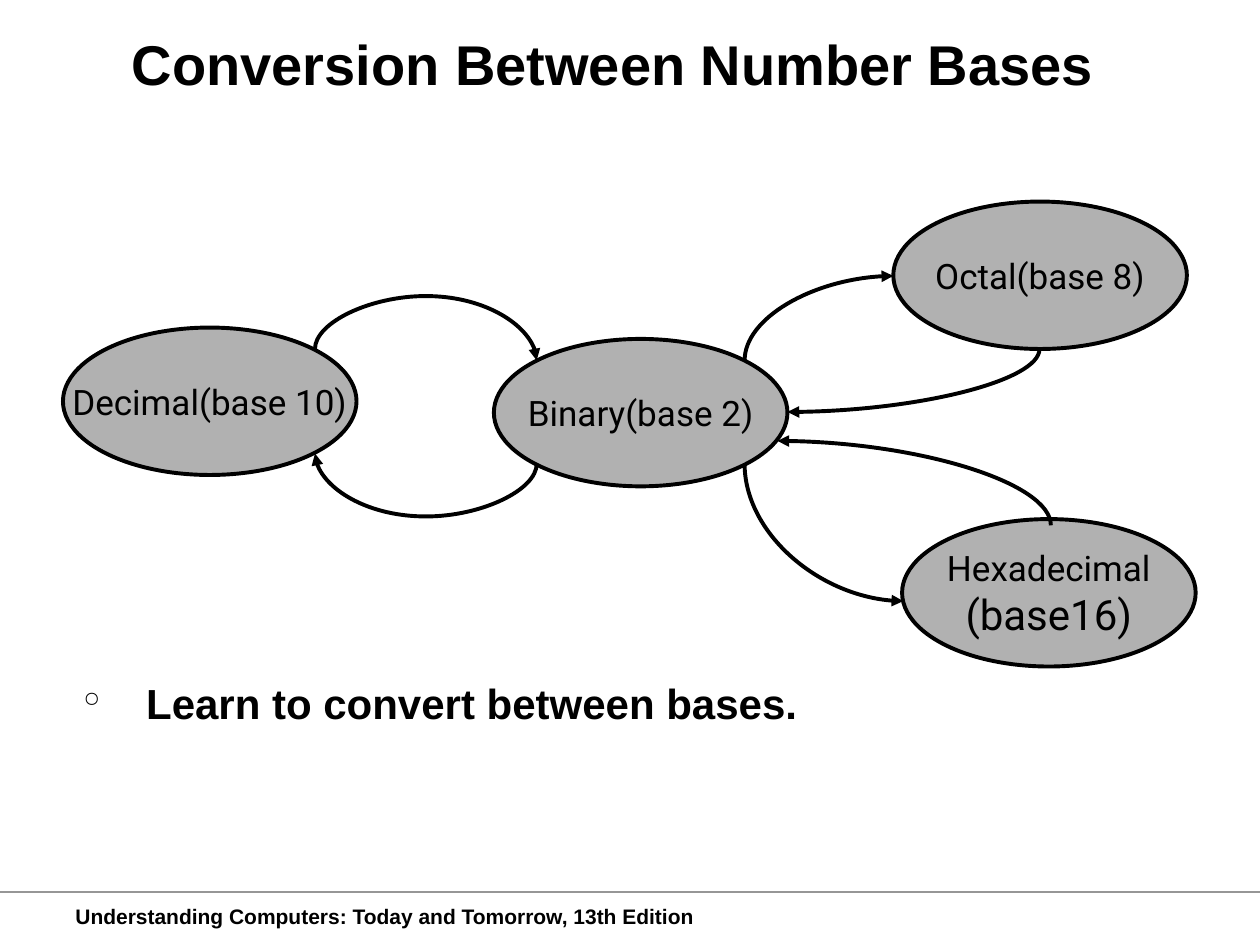
from typing import NamedTuple, Optional

from lxml import etree
from pptx import Presentation
from pptx.dml.color import RGBColor
from pptx.enum import shapes, text
from pptx.oxml.ns import qn
from pptx.util import Inches, Pt

COLORS = {"black": "000000", "fill": "B1B1B1", "rule": "969696"}
NODE_W, NODE_H = 2.33, 1.17
CENTER = text.PP_ALIGN.CENTER


class Line(NamedTuple):
    text: str
    size: float


class Node(NamedTuple):
    x: float
    y: float
    lines: tuple[Line, ...]


class Arc(NamedTuple):
    start: tuple[float, float]
    end: tuple[float, float]
    peak: Optional[float] = None  # height of the bulge of a two-bend arc


NODES = [
    Node(7.16, 4.12, (Line("Hexadecimal", 20), Line("(base16)", 24))),
    Node(0.5, 2.6, (Line("Decimal(base 10)", 20),)),
    Node(7.09, 1.6, (Line("Octal(base 8)", 20),)),
    Node(3.92, 2.69, (Line("Binary(base 2)", 20),)),
]
ARCS = [
    Arc((2.5, 2.77), (4.26, 2.86), 2.35),  # decimal to binary
    Arc((4.26, 3.68), (2.5, 3.6), 4.1),    # binary to decimal
    Arc((5.91, 2.86), (7.09, 2.19)),       # binary to octal
    Arc((8.25, 2.77), (6.25, 3.27)),       # octal to binary
    Arc((8.34, 4.17), (6.17, 3.5)),        # hexadecimal to binary
    Arc((5.91, 3.68), (7.17, 4.77)),       # binary to hexadecimal
]


def rgb(name: str) -> RGBColor:
    return RGBColor.from_string(COLORS[name])


def set_attrs(obj, values: dict) -> None:
    for name, value in values.items():
        setattr(obj, name, value)


def write(p, line: Line, font: str, bold: bool) -> None:
    r = p.add_run()
    r.text = line.text
    set_attrs(r.font, {"size": Pt(line.size), "name": font, "bold": bold})
    r.font.color.rgb = rgb("black")


def add_text(s, box: tuple, line: Line, frame: dict):
    tb = s.shapes.add_textbox(*map(Inches, box))
    tf = tb.text_frame
    set_attrs(tf, frame)
    p = tf.paragraphs[0]
    write(p, line, "Arial", True)
    return p


def style_line(cx, color: str, width: float) -> None:
    cx.line.color.rgb = rgb(color)
    cx.line.width = Pt(width)
    etree.SubElement(cx._element.spPr, qn("a:effectLst"))


def add_node(s, node: Node) -> None:
    sp = s.shapes.add_shape(shapes.MSO_SHAPE.OVAL, Inches(node.x), Inches(node.y),
                            Inches(NODE_W), Inches(NODE_H))
    sp.shadow.inherit = False
    sp.fill.solid()
    sp.fill.fore_color.rgb = rgb("fill")
    sp.line.color.rgb = rgb("black")
    sp.line.width = Pt(2.25)
    tf = sp.text_frame
    set_attrs(tf, {"word_wrap": False, "vertical_anchor": text.MSO_ANCHOR.MIDDLE})
    for i, line in enumerate(node.lines):
        p = tf.add_paragraph() if i else tf.paragraphs[0]
        p.alignment = CENTER
        write(p, line, "Roboto", False)


def add_arc(s, arc: Arc) -> None:
    (x1, y1), (x2, y2) = arc.start, arc.end
    dx, dy = x2 - x1, y2 - y1
    # A quarter turn makes the arc leave vertically, so width and height swap
    w, h = abs(dy), abs(dx)
    left, top = (x1 + x2 - w) / 2, (y1 + y2 - h) / 2
    cx = s.shapes.add_connector(shapes.MSO_CONNECTOR.CURVE, Inches(left), Inches(top),
                                Inches(left + w), Inches(top + h))
    style_line(cx, "black", 2.25)
    sp_pr = cx._element.spPr
    xfrm = sp_pr.find(qn("a:xfrm"))
    xfrm.set("rot", str((90 if dy > 0 else 270) * 60000))
    if (dx > 0) == (dy > 0):
        xfrm.set("flipV", "1")
    geom = sp_pr.find(qn("a:prstGeom"))
    if arc.peak is None:
        geom.set("prst", "curvedConnector2")
    else:
        guides = geom.find(qn("a:avLst"))
        if guides is None:
            guides = etree.SubElement(geom, qn("a:avLst"))
        ratio = round((arc.peak - y1) / dy * 100000)
        etree.SubElement(guides, qn("a:gd"), name="adj1", fmla=f"val {ratio}")
    etree.SubElement(sp_pr.find(qn("a:ln")), qn("a:tailEnd"), type="triangle")


def main() -> None:
    prs = Presentation()
    prs.slide_width, prs.slide_height = Inches(10), Inches(7.5)
    s = prs.slides.add_slide(prs.slide_layouts[6])

    # Footer
    add_text(s, (0.5, 7.12, 5.15, 0.3),
             Line("Understanding Computers: Today and Tomorrow, 13th Edition", 12),
             {"word_wrap": False})
    rule = s.shapes.add_connector(shapes.MSO_CONNECTOR.STRAIGHT, 0, Inches(7.08),
                                  Inches(10), Inches(7.08))
    style_line(rule, "rule", 0.75)

    # Title
    title = add_text(s, (0.72, 0.24, 8.29, 0.52),
                     Line("Conversion Between Number Bases", 32),
                     {"word_wrap": True, "vertical_anchor": text.MSO_ANCHOR.MIDDLE})
    title.alignment = CENTER

    # Number bases and the conversions between them
    for node in NODES:
        add_node(s, node)
    for arc in ARCS:
        add_arc(s, arc)

    # Bullet
    side, edge = Inches(0.07), Inches(0.03)
    p = add_text(s, (0.59, 5.44, 6.67, 0.9), Line("Learn to convert between bases.", 24),
                 {"word_wrap": True, "margin_left": side, "margin_right": side,
                  "margin_top": edge, "margin_bottom": edge})
    p.line_spacing = 0.75
    p_pr = p._p.get_or_add_pPr()
    p_pr.set("marL", str(Inches(0.5)))
    p_pr.set("indent", str(-Inches(0.5)))
    etree.SubElement(p_pr, qn("a:buChar"), char="°")

    prs.save("out.pptx")


if __name__ == "__main__":
    main()
